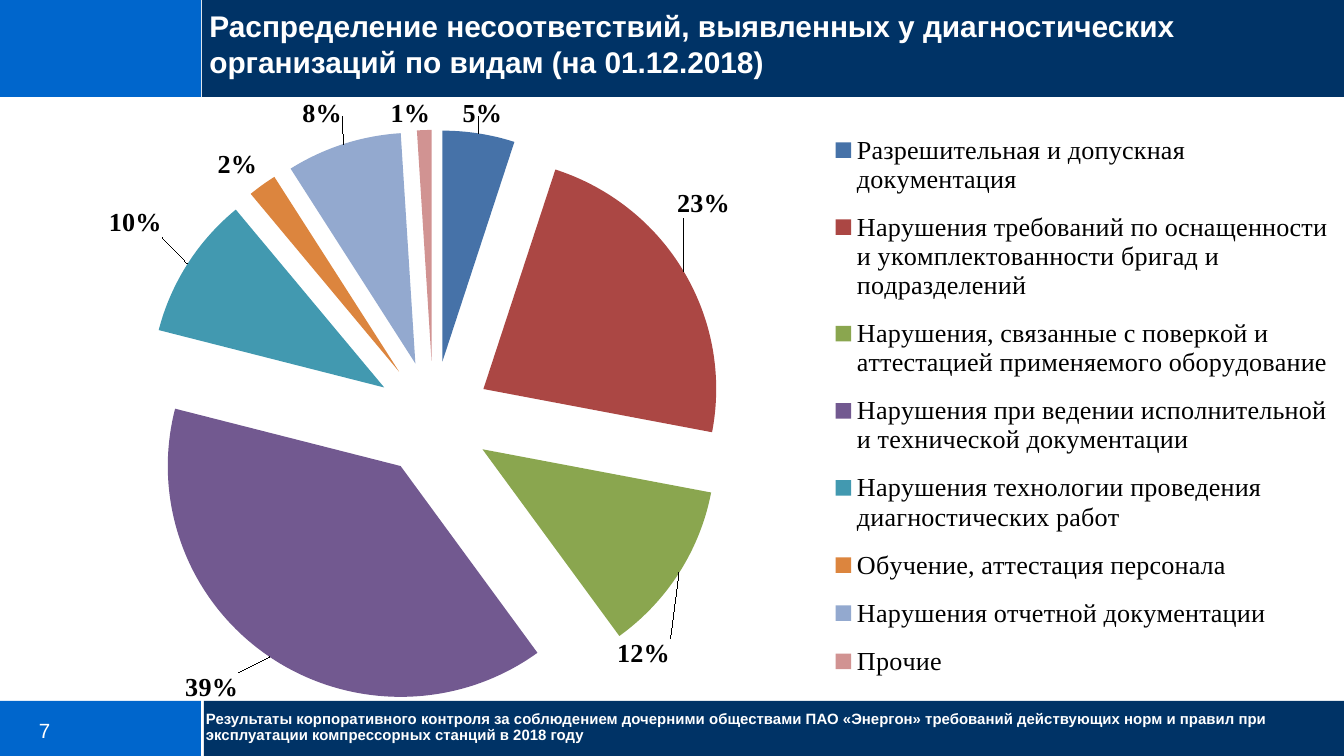
from copy import deepcopy

from pptx import Presentation
from pptx.chart.data import CategoryChartData
from pptx.dml.color import RGBColor
from pptx.enum.chart import XL_CHART_TYPE, XL_LABEL_POSITION, XL_LEGEND_POSITION
from pptx.enum.shapes import MSO_SHAPE
from pptx.enum.text import MSO_ANCHOR, PP_ALIGN
from pptx.oxml import parse_xml
from pptx.oxml.ns import nsdecls, qn
from pptx.util import Pt

PX = 9144000 / 1344
NAVY = RGBColor(0x00, 0x33, 0x66)
BLUE = RGBColor(0x00, 0x66, 0xCC)
WHITE = RGBColor(0xFF, 0xFF, 0xFF)
BLACK = RGBColor(0x00, 0x00, 0x00)

TITLE = "Распределение несоответствий, выявленных у диагностических организаций по видам (на 01.12.2018)"
FOOTER = ("Результаты корпоративного контроля за соблюдением дочерними обществами ПАО «Энергон» "
          "требований действующих норм и правил при эксплуатации компрессорных станций в 2018 году")
NUMBER = "7"

BARS = [
    ((204, 701, 1140, 55), NAVY),
    ((0, 701, 201, 55), BLUE),
    ((0, 0, 201, 97), BLUE),
    ((202, 0, 1142, 97), NAVY),
]

CHART_BOX = (0, 93, 1344, 614)
# category, value, colour, label shift in px
SLICES = [
    ("Разрешительная и допускная документация", 5, RGBColor(0x46, 0x72, 0xA8), (-18, -9)),
    ("Нарушения требований по оснащенности и укомплектованности бригад и подразделений",
     23, RGBColor(0xAB, 0x47, 0x44), (-14, -50)),
    ("Нарушения, связанные с поверкой и аттестацией применяемого оборудование",
     12, RGBColor(0x8A, 0xA6, 0x4F), (-68, 62)),
    ("Нарушения при ведении исполнительной и технической документации",
     39, RGBColor(0x72, 0x59, 0x90), (-27, 9)),
    ("Нарушения технологии проведения диагностических работ",
     10, RGBColor(0x42, 0x99, 0xB0), (-19, -23)),
    ("Обучение, аттестация персонала", 2, RGBColor(0xDC, 0x85, 0x3E), None),
    ("Нарушения отчетной документации", 8, RGBColor(0x93, 0xA9, 0xCF), (2, -20)),
    ("Прочие", 1, RGBColor(0xD1, 0x93, 0x92), (-13, -6)),
]
PLOT = dict(layoutTarget="inner", xMode="edge", yMode="edge", x=0, y=0.052, w=0.645, h=0.948)
LEGEND = dict(xMode="edge", yMode="edge", x=0.628, y=0.03, w=0.372, h=0.95)


def emu(box):
    return [round(v * PX) for v in box]


def set_attrs(obj, **values):
    for name, value in values.items():
        setattr(obj, name, value)


def set_font(font, color, **values):
    set_attrs(font, **values)
    font.color.rgb = color


def write(sp, text, size, bold, spacing=1.0):
    tf = sp.text_frame
    tf.text = text
    tf.word_wrap = True
    p = tf.paragraphs[0]
    set_attrs(p, alignment=PP_ALIGN.LEFT, line_spacing=spacing)
    set_font(p.runs[0].font, WHITE, name="Arial", size=Pt(size), bold=bold)
    return tf


def set_insets(tf, x, y):
    x, y = emu((x, y))
    set_attrs(tf, margin_left=x, margin_right=x, margin_top=y, margin_bottom=y)


def layout(values):
    parts = "".join(f'<c:{k} val="{v}"/>' for k, v in values.items())
    return f'<c:layout {nsdecls("c")}><c:manualLayout>{parts}</c:manualLayout></c:layout>'


def set_layout(element, values, index):
    for old in element.findall(qn("c:layout")):
        element.remove(old)
    element.insert(index, parse_xml(layout(values)))


def point_label(i, shift, txpr):
    x, y = (round(d / size, 3) for d, size in zip(shift, CHART_BOX[2:]))
    flags = "".join(f'<c:show{name} val="{int(name == "Percent")}"/>'
                    for name in ("LegendKey", "Val", "CatName", "SerName", "Percent", "BubbleSize"))
    label = parse_xml(f'<c:dLbl {nsdecls("c")}><c:idx val="{i}"/>{layout(dict(x=x, y=y))}'
                      f'<c:dLblPos val="outEnd"/>{flags}</c:dLbl>')
    label.insert(2, deepcopy(txpr))
    return label


def add_pie(s):
    data = CategoryChartData()
    data.categories = [row[0] for row in SLICES]
    data.add_series("Series 1", [row[1] for row in SLICES])
    chart = s.shapes.add_chart(XL_CHART_TYPE.PIE, *emu(CHART_BOX), data).chart
    chart.has_title = False
    set_font(chart.font, BLACK, name="Calibri", size=Pt(10))

    chart.has_legend = True
    legend = chart.legend
    set_attrs(legend, position=XL_LEGEND_POSITION.RIGHT, include_in_layout=False)
    set_font(legend.font, BLACK, name="Times New Roman", size=Pt(14))
    set_layout(legend._element, LEGEND, 1)

    plot = chart.plots[0]
    plot.vary_by_categories = True
    set_layout(chart._chartSpace.chart.plotArea, PLOT, 0)
    series = plot.series[0]
    labels = series.data_labels
    set_attrs(labels, show_percentage=True, show_value=False, number_format="0%",
              number_format_is_linked=False, position=XL_LABEL_POSITION.OUTSIDE_END)
    set_font(labels.font, BLACK, name="Times New Roman", size=Pt(14), bold=True)

    txpr = labels._element.find(qn("c:txPr"))
    position = 0
    for i, (_, _, color, shift) in enumerate(SLICES):
        fill = series.points[i].format.fill
        fill.solid()
        fill.fore_color.rgb = color
        if shift:
            labels._element.insert(position, point_label(i, shift, txpr))
            position += 1
    explosion = parse_xml(f'<c:explosion {nsdecls("c")} val="25"/>')
    points = series._element.findall(qn("c:dPt"))
    for anchor in [points[0], *(point.find(qn("c:spPr")) for point in points)]:
        anchor.addprevious(deepcopy(explosion))


def main():
    prs = Presentation()
    prs.slide_width, prs.slide_height = emu((1344, 756))
    s = prs.slides.add_slide(prs.slide_layouts[5])

    for box, color in BARS:
        sp = s.shapes.add_shape(MSO_SHAPE.RECTANGLE, *emu(box))
        sp.shadow.inherit = False
        sp.fill.solid()
        sp.fill.fore_color.rgb = color
        sp.line.fill.background()

    number = s.shapes.add_textbox(*emu((39, 718, 71, 19)))
    set_insets(write(number, NUMBER, 11, False), 0, 0)
    footer = s.shapes.add_textbox(*emu((196, 707, 1099, 43)))
    set_insets(write(footer, FOOTER, 8, True, 0.9), 10, 5)

    title = s.shapes.title
    set_attrs(title, **dict(zip(("left", "top", "width", "height"), emu((196, 1, 1136, 86)))))
    write(title, TITLE, 16, True).vertical_anchor = MSO_ANCHOR.TOP
    s.shapes.element.append(title.element)

    add_pie(s)
    prs.save("out.pptx")


if __name__ == "__main__":
    main()
